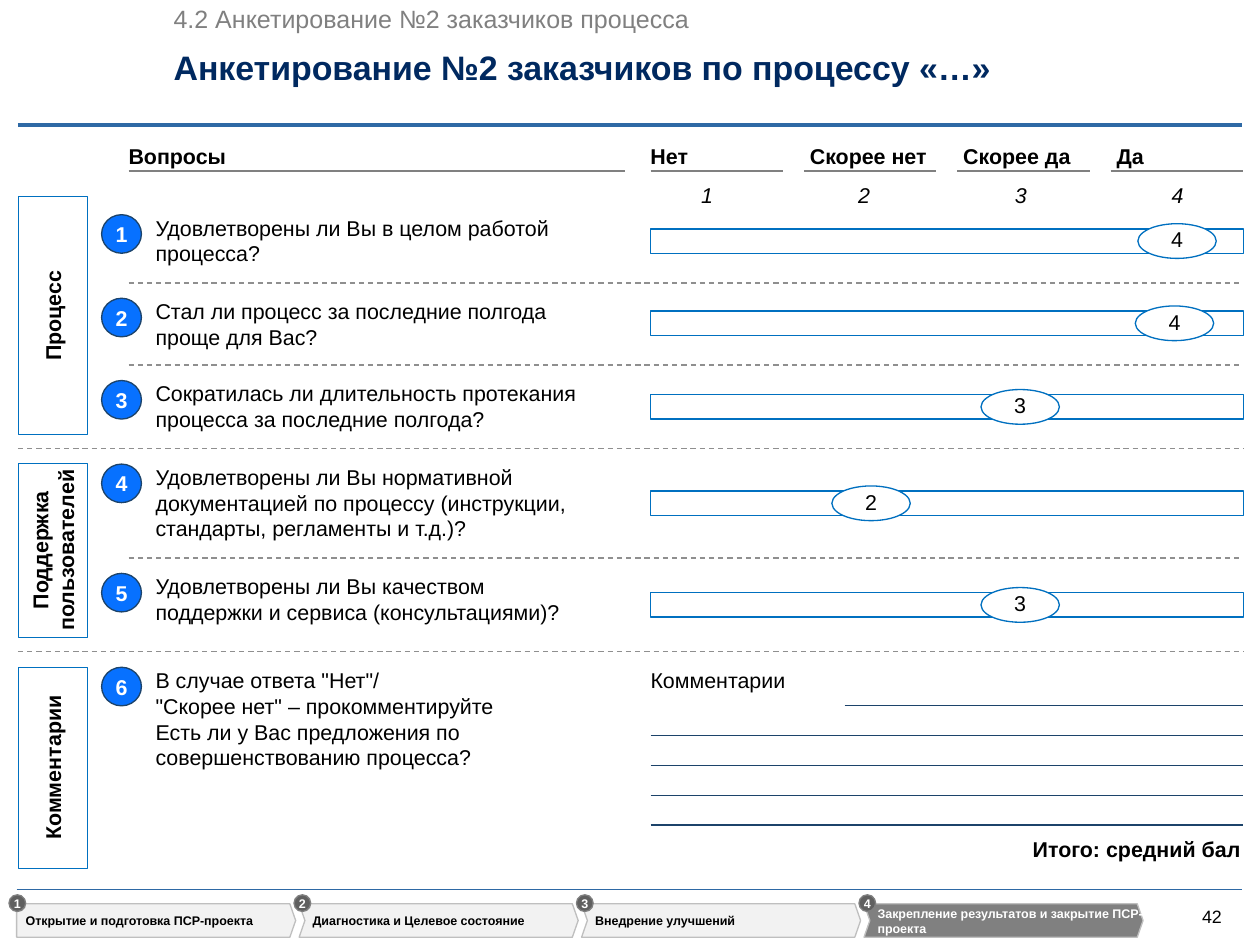
from pptx import Presentation
from pptx.dml.color import RGBColor
from pptx.enum.dml import MSO_LINE
from pptx.enum.shapes import MSO_CONNECTOR, MSO_SHAPE
from pptx.enum.text import MSO_ANCHOR, PP_ALIGN
from pptx.oxml.ns import qn
from pptx.util import Inches, Pt
from lxml import etree

RECT, OVAL = MSO_SHAPE.RECTANGLE, MSO_SHAPE.OVAL
STRAIGHT = MSO_CONNECTOR.STRAIGHT
DASH = MSO_LINE.DASH
LEFT, CENTER, RIGHT = PP_ALIGN.LEFT, PP_ALIGN.CENTER, PP_ALIGN.RIGHT
TOP, MIDDLE, BOTTOM = MSO_ANCHOR.TOP, MSO_ANCHOR.MIDDLE, MSO_ANCHOR.BOTTOM

COLORS = {
    "black": "000000", "white": "FFFFFF", "navy": "002960", "rule": "2E69A5",
    "outline": "0070C0", "number": "0771FF", "ink": "1C436A", "gray": "808080",
    "dash": "8F8F8F", "step": "F2F2F2", "step edge": "BFBFBF", "badge": "606060",
}
COLUMNS, ROWS = 98, 73.5  # square grid cells


class SurveySlide:
    font = "Arial"

    def __init__(self, prs):
        self.slide = prs.slides.add_slide(prs.slide_layouts[6])
        self.shapes = self.slide.shapes
        self.col = prs.slide_width / COLUMNS
        self.row = prs.slide_height / ROWS

    def x(self, columns):
        return round(columns * self.col)

    def y(self, rows):
        return round(rows * self.row)

    def color(self, name):
        return RGBColor.from_string(COLORS[name])

    def line(self, x1, y1, x2, y2, color, width=0.75, dash=None):
        line = self.shapes.add_connector(STRAIGHT, self.x(x1), self.y(y1), self.x(x2), self.y(y2))
        line.line.color.rgb = self.color(color)
        line.line.width = Pt(width)
        if dash:
            line.line.dash_style = dash
        etree.SubElement(line._element.spPr, qn("a:effectLst"))

    def fill_text(self, shape, text, size=12, color="black", bold=False, italic=False,
                  align=LEFT, anchor=TOP, wrap=True, spacing=1.0, indent=0, bottom=0):
        frame = shape.text_frame
        frame.word_wrap = wrap
        frame.vertical_anchor = anchor
        frame.margin_left = self.x(indent)
        frame.margin_right = frame.margin_top = 0
        frame.margin_bottom = self.y(bottom)
        for i, part in enumerate([text] if isinstance(text, str) else text):
            paragraph = frame.add_paragraph() if i else frame.paragraphs[0]
            paragraph.text = part
            paragraph.alignment = align
            paragraph.line_spacing = spacing
            font = paragraph.font
            font.name, font.size = self.font, Pt(size)
            font.bold, font.italic = bold, italic
            font.color.rgb = self.color(color)

    def text(self, x, y, w, h, text, **style):
        box = self.shapes.add_textbox(self.x(x), self.y(y), self.x(w), self.y(h))
        self.fill_text(box, text, **style)

    def paint(self, shape, fill, line, width=0.75):
        shape.shadow.inherit = False
        shape.fill.solid()
        shape.fill.fore_color.rgb = self.color(fill)
        shape.line.color.rgb = self.color(line)
        shape.line.width = Pt(width)

    def shape(self, kind, x, y, w, h, fill, line, width=0.75, text=None, vertical=False, **style):
        shape = self.shapes.add_shape(kind, self.x(x), self.y(y), self.x(w), self.y(h))
        self.paint(shape, fill, line, width)
        if text:
            self.fill_text(shape, text, align=CENTER, anchor=MIDDLE, **style)
        if vertical:
            shape.text_frame._txBody.bodyPr.set("vert", "vert270")

    def step(self, x, y, w, h, notch, text, fill, color, indent):
        tip = 0.45
        points = [(x + w - tip, y), (x + w, y + h / 2), (x + w - tip, y + h),
                  (x, y + h), (x + notch, y + h / 2)]
        outline = self.shapes.build_freeform(self.x(x), self.y(y))
        outline.add_line_segments([(self.x(px), self.y(py)) for px, py in points])
        arrow = outline.convert_to_shape()
        self.paint(arrow, fill, "step edge")
        self.fill_text(arrow, text, size=7, color=color, bold=True, anchor=MIDDLE, indent=indent)


# Question: top, bar top, score, mark centre, separator start, text
QUESTIONS = [
    (16.7, 17.8, "4", 91.55, 10, "Удовлетворены ли Вы в целом работой процесса?"),
    (23.2, 24.2, "4", 91.35, 10, "Стал ли процесс за последние полгода\nпроще для Вас?"),
    (29.6, 30.7, "3", 79.35, 1.4,
     "Сократилась ли длительность протекания\nпроцесса за последние полгода?"),
    (36.1, 38.2, "2", 67.75, 10, "Удовлетворены ли Вы нормативной документацией по процессу "
     "(инструкции, стандарты, регламенты и т.д.)?"),
    (44.6, 46.1, "3", 79.35, 1.4,
     "Удовлетворены ли Вы качеством\nподдержки и сервиса (консультациями)?"),
    (51.9, None, None, None, None,
     ["В случае ответа \"Нет\"/\n\"Скорее нет\" – прокомментируйте",
      "Есть ли у Вас предложения по совершенствованию процесса?"]),
]
SECTIONS = [("Процесс", 15.3, 18.5), ("Поддержка пользователей", 36, 13.6),
            ("Комментарии", 51.9, 15.6)]
ANSWERS = [("Нет", 0), ("Скорее нет", 0.46), ("Скорее да", 0.46), ("Да", 0.46)]
STEPS = ["Открытие и подготовка ПСР-проекта", "Диагностика и Целевое состояние",
         "Внедрение улучшений", "Закрепление результатов и закрытие ПСР-проекта"]
SCALE_LEFT, SCALE_RIGHT = 50.6, 96.7


def main():
    prs = Presentation()
    prs.slide_width, prs.slide_height = Inches(9.8), Inches(7.35)
    survey = SurveySlide(prs)

    # Heading
    survey.text(13.5, 0.3, 40.4, 2.4, "4.2 Анкетирование №2 заказчиков процесса",
                size=14, color="gray", wrap=False)
    survey.text(13.5, 3.6, 73.1, 3.2, "Анкетирование №2 заказчиков по процессу «…»",
                size=19, color="navy", bold=True, anchor=MIDDLE)
    survey.line(1.4, 9.7, 96.6, 9.7, "rule", 2.25)

    # Column headings and score scale
    headings = [("Вопросы", 10, 38.6, 0)]
    headings += [(answer, SCALE_LEFT + 11.93 * i, 10.3, indent)
                 for i, (answer, indent) in enumerate(ANSWERS)]
    for heading, left, width, indent in headings:
        survey.text(left, 11.1, width, 2.2, heading, bold=True, anchor=BOTTOM,
                    indent=indent, bottom=0.2)
        survey.line(left, 13.3, left + width, 13.3, "gray")
    for i in range(len(ANSWERS)):
        survey.text(54 + 12.2 * i, 14.4, 2, 1.8, str(i + 1), italic=True,
                    align=CENTER, spacing=0.9)

    # Sections
    for section, top, height in SECTIONS:
        survey.shape(RECT, 1.4, top, 5.4, height, "white", "outline", 0.25,
                     text=section, bold=True, vertical=True)

    # Questions with their scores
    for i, (top, bar, score, mark, separator, question) in enumerate(QUESTIONS):
        survey.text(12.1, top, 36.5, 4, question)
        survey.shape(OVAL, 7.9, top, 3.1, 3, "number", "ink", text=str(i + 1),
                     color="white", bold=True, wrap=False)
        if score:
            survey.shape(RECT, SCALE_LEFT, bar, SCALE_RIGHT - SCALE_LEFT, 1.9, "white", "outline")
            survey.shape(OVAL, mark - 3.05, bar - 0.4, 6.1, 2.7, "white", "outline",
                         text=score, wrap=False, spacing=0.9)
            border = QUESTIONS[i + 1][0] - 1.2
            survey.line(separator, border, SCALE_RIGHT, border, "dash", dash=DASH)

    # Comments and total
    survey.text(SCALE_LEFT, 51.9, 13.9, 2, "Комментарии")
    for i in range(5):
        level = 54.9 + 2.32 * i
        survey.line(SCALE_LEFT if i else 65.7, level, SCALE_RIGHT, level, "ink")
    survey.text(78, 65, 18.5, 2, "Итого: средний бал", bold=True, align=RIGHT, wrap=False)

    # Project steps and page number
    survey.line(1.3, 69.2, 96.6, 69.2, "rule")
    for i, step in enumerate(STEPS):
        left = 1.3 + 21.97 * i
        current = i == len(STEPS) - 1
        survey.step(left, 70.3, 21.7, 2.6, 0.45 if i else 0, step,
                    "gray" if current else "step", "white" if current else "black",
                    1.05 if i else 0.7)
        survey.shape(OVAL, left - (0.4 if i else 0.6), 69.6, 1.3, 1.3, "badge", "gray",
                     text=str(i + 1), size=7, color="white", bold=True, wrap=False)
    survey.text(93.5, 70.4, 2.3, 1.7, "42", size=10, anchor=MIDDLE, wrap=False)

    prs.save("out.pptx")


if __name__ == "__main__":
    main()
